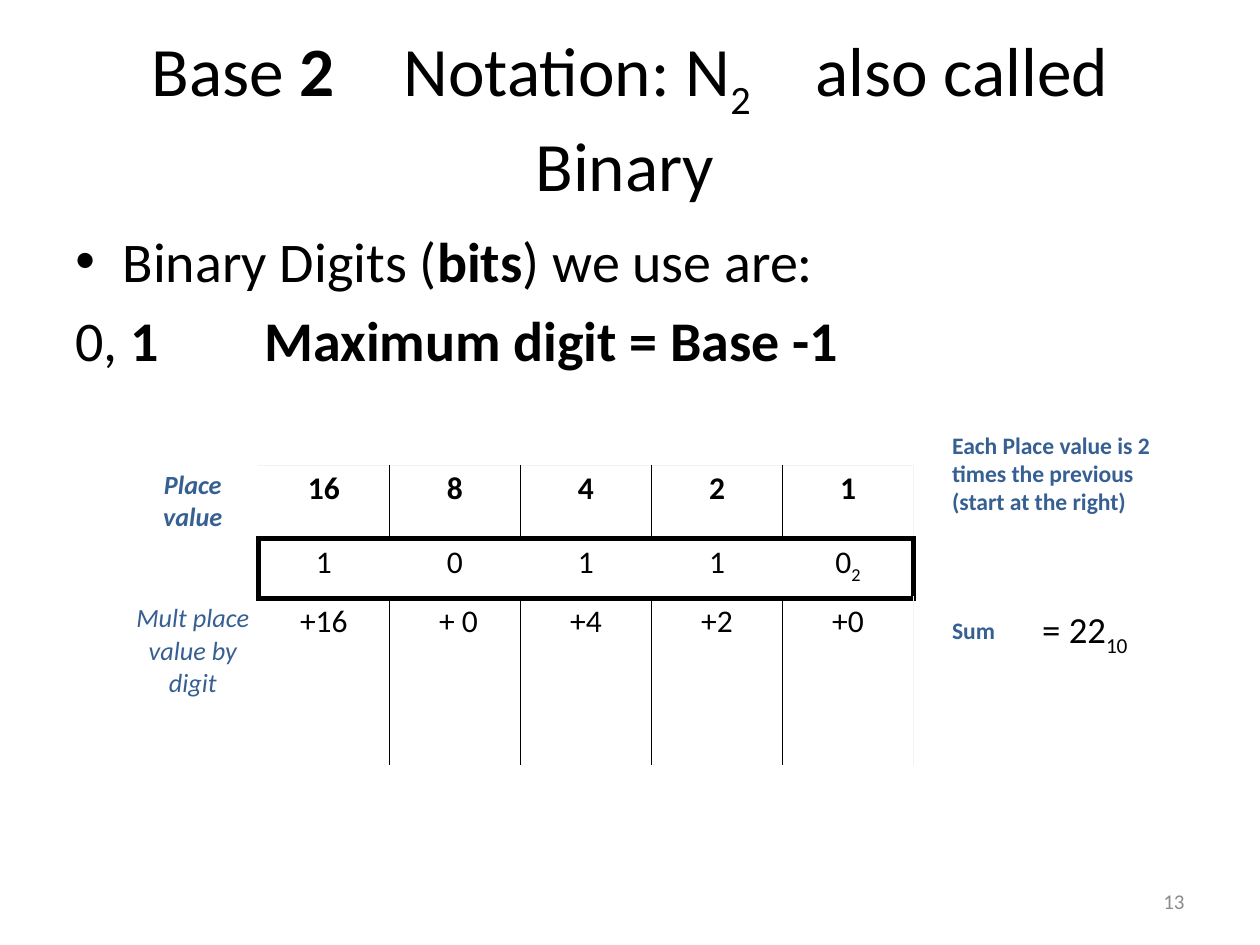
from lxml.etree import SubElement
from pptx import Presentation
from pptx.dml.color import RGBColor
from pptx.enum.text import MSO_ANCHOR as ANCHOR, MSO_AUTO_SIZE as FIT, PP_ALIGN as ALIGN
from pptx.oxml import parse_xml
from pptx.oxml.ns import nsdecls, qn
from pptx.util import Pt

BLACK = RGBColor(0x00, 0x00, 0x00)
WHITE = RGBColor(0xFF, 0xFF, 0xFF)
BLUE = RGBColor(0x37, 0x60, 0x92)
GREY = RGBColor(0x8C, 0x8C, 0x8C)
PALE = RGBColor(0xF2, 0xF2, 0xF2)
FONT = "Calibri"

# A paragraph is a list of runs; a run is (text, format).
BOLD, SUB = {"bold": True}, {"sub": True}
TITLE = [("Base ", {}), ("2\t\t", BOLD), ("Notation: N", {}), ("2", SUB),
         (" ", {"spacing": 28}), ("also called Binary\t", {})]
BODY = [
    [("Binary Digits (", {}), ("bits", BOLD), (") we use are:", {})],
    [("0, ", {}), ("1\t\tMaximum digit = Base -1", BOLD)],
]
ROW_LABELS = ["Place value", "", "Mult place value by digit"]
PLACES = ["16", "8", "4", "2", "1"]
DIGITS = ["1", "0", "1", "1", "0"]
PRODUCTS = ["+16", " + 0", "+4", "+2", "+0"]
BASE = "2"
PLACE_NOTE = "Each Place value is 2 times the previous (start at the right)"
SUM = [("= 22", {}), ("10", SUB)]

TABLE_LEFT, TABLE_TOP, COLUMN_WIDTH = 72.7, 265.7, 74.9
ROW_HEIGHTS = [41, 34, 95]
LAST_COLUMN = len(PLACES)
DIGIT_ROW = 1
THIN, THICK = (BLACK, 0.25), (BLACK, 3)
FAINT, HIDDEN = (PALE, 0.25), (WHITE, 0.25)


def write(frame, paragraphs, size, color=BLACK, bold=False, italic=False,
          align=ALIGN.LEFT, before=0):
    for i, runs in enumerate(paragraphs):
        paragraph = frame.paragraphs[0] if i == 0 else frame.add_paragraph()
        paragraph.alignment = align
        paragraph.space_before = Pt(before)
        for text, style in runs:
            run = paragraph.add_run()
            run.text = text
            font = run.font
            font.name, font.size = FONT, Pt(size)
            font.color.rgb = color
            font.bold, font.italic = style.get("bold", bold), italic
            if style.get("sub"):
                font._element.set("baseline", "-25000")
            if "spacing" in style:
                font._element.set("spc", str(style["spacing"] * 100))


def add_text(slide, box, paragraphs, size, anchor=ANCHOR.TOP, fit=FIT.NONE, **style):
    frame = slide.shapes.add_textbox(*map(Pt, box)).text_frame
    frame.word_wrap = True
    frame.auto_size = fit
    frame.vertical_anchor = anchor
    write(frame, paragraphs, size, **style)
    return frame


def add_bullet(paragraph, indent):
    properties = paragraph._p.get_or_add_pPr()
    properties.set("marL", str(Pt(indent)))
    properties.set("indent", str(-Pt(indent)))
    SubElement(properties, qn("a:buFont")).set("typeface", "Arial")
    SubElement(properties, qn("a:buChar")).set("char", "•")


def vertical_edge(row, column):
    """Line on the left of a column; the digit row has only its outer frame."""
    if column == 0:
        return None
    if row == DIGIT_ROW:
        return THICK if column in (1, LAST_COLUMN + 1) else None
    if column == 1:
        return None
    return FAINT if column > LAST_COLUMN else THIN


def horizontal_edge(row, column):
    """Line above a row; the label column has none."""
    return [FAINT, THICK, THICK, HIDDEN][row] if column else None


def set_borders(cell, row, column):
    edges = {
        "lnL": vertical_edge(row, column),
        "lnR": vertical_edge(row, column + 1),
        "lnT": horizontal_edge(row, column),
        "lnB": horizontal_edge(row + 1, column),
    }
    properties = cell._tc.get_or_add_tcPr()
    for i, (tag, edge) in enumerate(edges.items()):
        if edge:
            color, width = edge
            line = (f'<a:{tag} {nsdecls("a")} w="{Pt(width)}"><a:solidFill>'
                    f'<a:srgbClr val="{color}"/></a:solidFill></a:{tag}>')
        else:
            line = f'<a:{tag} {nsdecls("a")}><a:noFill/></a:{tag}>'
        properties.insert(i, parse_xml(line))


def add_place_table(slide):
    rows = [[label, *values] for label, values
            in zip(ROW_LABELS, (PLACES, DIGITS, PRODUCTS))]
    columns = LAST_COLUMN + 1
    table = slide.shapes.add_table(
        len(rows), columns, Pt(TABLE_LEFT), Pt(TABLE_TOP),
        Pt(COLUMN_WIDTH * columns), Pt(sum(ROW_HEIGHTS))).table
    table.first_row = table.horz_banding = False
    for column in table.columns:
        column.width = Pt(COLUMN_WIDTH)
    for r, (values, height) in enumerate(zip(rows, ROW_HEIGHTS)):
        table.rows[r].height = Pt(height)
        for c, value in enumerate(values):
            cell = table.cell(r, c)
            cell.fill.background()
            cell.margin_left = cell.margin_right = Pt(5)
            cell.margin_top = cell.margin_bottom = Pt(2.7)
            set_borders(cell, r, c)
            if not value:
                continue
            runs = [(value, {})]
            if r == DIGIT_ROW and c == LAST_COLUMN:
                runs.append((BASE, SUB))
            is_label = c == 0
            write(cell.text_frame, [runs], 15 if is_label else 18,
                  color=BLUE if is_label else BLACK, bold=r == 0,
                  italic=is_label, align=ALIGN.CENTER)


def main():
    deck = Presentation()
    deck.slide_width, deck.slide_height = Pt(720), Pt(540)
    slide = deck.slides.add_slide(deck.slide_layouts[6])

    add_text(slide, (36, 21.6, 648, 90), [TITLE], 39.6,
             anchor=ANCHOR.MIDDLE, align=ALIGN.CENTER)
    body = add_text(slide, (36, 126, 648, 356.4), BODY, 32, before=6.4)
    add_bullet(body.paragraphs[0], 27)
    add_place_table(slide)

    note = {"size": 13.5, "color": BLUE, "bold": True, "fit": FIT.SHAPE_TO_FIT_TEXT}
    add_text(slide, (537, 242.6, 133.2, 56.2), [[(PLACE_NOTE, {})]], **note)
    add_text(slide, (557.3, 343.4, 125.3, 32.4), [SUM], 21,
             fit=FIT.SHAPE_TO_FIT_TEXT, align=ALIGN.CENTER)
    add_text(slide, (537, 348.5, 52.6, 23.8), [[("Sum", {})]], **note)
    add_text(slide, (516.2, 500.4, 167.8, 28.8), [[("13", {})]], 12,
             color=GREY, anchor=ANCHOR.MIDDLE, align=ALIGN.RIGHT)
    deck.save("out.pptx")


if __name__ == "__main__":
    main()
